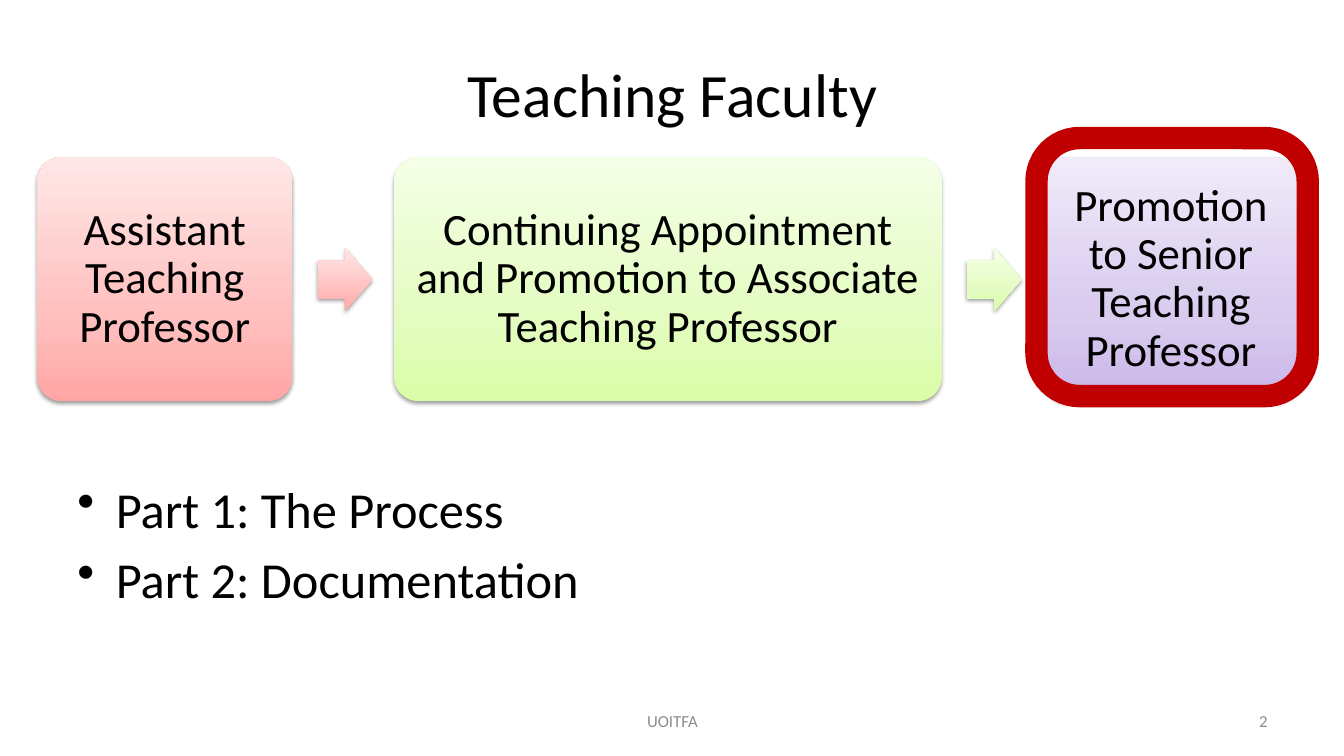
from copy import deepcopy
from lxml import etree
from pptx import Presentation, util as u
from pptx.dml.color import RGBColor as RGB
from pptx.enum import shapes, text
from pptx.oxml.ns import qn

PX = 9144
BLACK = RGB(0, 0, 0)
GREY = RGB(0x8C, 0x8C, 0x8C)
DARK_RED = RGB(0xC0, 0, 0)
RED = [RGB(0xFF, 0xA6, 0xA5), RGB(0xFF, 0xC0, 0xBF), RGB(0xFF, 0xE7, 0xE7)]
GREEN = [RGB(0xDA, 0xFD, 0xA7), RGB(0xE4, 0xFC, 0xC2), RGB(0xF5, 0xFF, 0xE7)]
PURPLE = [RGB(0xC9, 0xB5, 0xE8), RGB(0xD8, 0xCB, 0xEE), RGB(0xF0, 0xEA, 0xF9)]
STOPS = [0, 0.35, 1]

LEFT, MID, RIGHT = text.PP_ALIGN.LEFT, text.PP_ALIGN.CENTER, text.PP_ALIGN.RIGHT
TITLE = "Teaching Faculty"
PARTS = ["Part 1: The Process", "Part 2: Documentation"]
FOOT = [("UOITFA", (456, 695, 422, 40), MID), ("2", (956, 695, 311, 40), RIGHT)]
STEPS = [
    ("Assistant Teaching Professor", 253, RED),
    ("Continuing Appointment and Promotion to Associate Teaching Professor", 543, GREEN),
    ("Promotion to Senior Teaching Professor", 253, PURPLE),
]
START, TOP, HIGH = 37, 156, 242
ARROW_W, ARROW_H, BEFORE, AFTER = 54, 63, 25, 22
FRAME = (1028, 137, 269, 256)

deck = Presentation()
deck.slide_width, deck.slide_height = 1333 * PX, 750 * PX
slide = deck.slides.add_slide(deck.slide_layouts[6])


def scale(box):
    return [n * PX for n in box]


def style(para, size, color, align):
    para.alignment = align
    para.font.name, para.font.size = "Calibri", u.Pt(size)
    para.font.color.rgb = color


def write(lines, box, size, color=BLACK, align=LEFT, anchor=text.MSO_ANCHOR.MIDDLE):
    frame = slide.shapes.add_textbox(*scale(box)).text_frame
    frame.word_wrap, frame.vertical_anchor = True, anchor
    frame.text = "\n".join(lines)
    for para in frame.paragraphs:
        style(para, size, color, align)
    return frame.paragraphs


def bullet(para):
    props = para._p.get_or_add_pPr()
    props.set("marL", str(38 * PX))
    props.set("indent", str(-38 * PX))
    mark = etree.Element(qn("a:buChar"), char="•")
    fonts = props.find(qn("a:defRPr"))
    if fonts is None:
        props.append(mark)
    else:
        fonts.addprevious(mark)


def block(kind, box, colors, adjust):
    shape = slide.shapes.add_shape(kind, *scale(box))
    for i, value in enumerate(adjust):
        shape.adjustments[i] = value
    shape.line.fill.background()
    shape.fill.gradient()
    shape.fill.gradient_angle = 90
    props = shape._element.spPr
    grid = props.find(".//" + qn("a:gsLst"))
    grid.append(deepcopy(grid[-1]))
    for stop, place, color in zip(shape.fill.gradient_stops, STOPS, colors):
        stop.position, stop.color.rgb = place, color
    shape.shadow.inherit = False
    shade = etree.SubElement(
        props.find(qn("a:effectLst")), qn("a:outerShdw"), blurRad=str(u.Pt(3.1)),
        dist=str(u.Pt(1.6)), dir="5400000", rotWithShape="0")
    tint = etree.SubElement(shade, qn("a:srgbClr"), val="000000")
    etree.SubElement(tint, qn("a:alpha"), val="38000")
    return shape


write([TITLE], (67, 30, 1200, 125), 44, align=MID)
paras = write(PARTS, (67, 469, 1200, 200), 36, anchor=text.MSO_ANCHOR.TOP)
for i, para in enumerate(paras):
    bullet(para)
    if i:
        para.space_before = u.Pt(7.2)
for words, box, align in FOOT:
    write([words], box, 12, GREY, align)

x = START
for i, (words, wide, colors) in enumerate(STEPS):
    card = block(shapes.MSO_SHAPE.ROUNDED_RECTANGLE, (x, TOP, wide, HIGH), colors, [0.1])
    frame = card.text_frame
    frame.word_wrap, frame.vertical_anchor = True, text.MSO_ANCHOR.MIDDLE
    frame.margin_left = frame.margin_right = 13 * PX
    frame.margin_top = frame.margin_bottom = 13 * PX
    frame.text = words
    para = frame.paragraphs[0]
    para.line_spacing = 0.9
    style(para, 32, BLACK, MID)
    x += wide + BEFORE
    if i < len(STEPS) - 1:
        y = TOP + (HIGH - ARROW_H + 1) // 2
        block(shapes.MSO_SHAPE.RIGHT_ARROW, (x, y, ARROW_W, ARROW_H), colors, [0.6, 0.5])
        x += ARROW_W + AFTER

ring = slide.shapes.add_shape(shapes.MSO_SHAPE.ROUNDED_RECTANGLE, *scale(FRAME))
ring.shadow.inherit = False
ring.fill.background()
ring.line.color.rgb, ring.line.width = DARK_RED, u.Pt(16)

deck.save("out.pptx")
